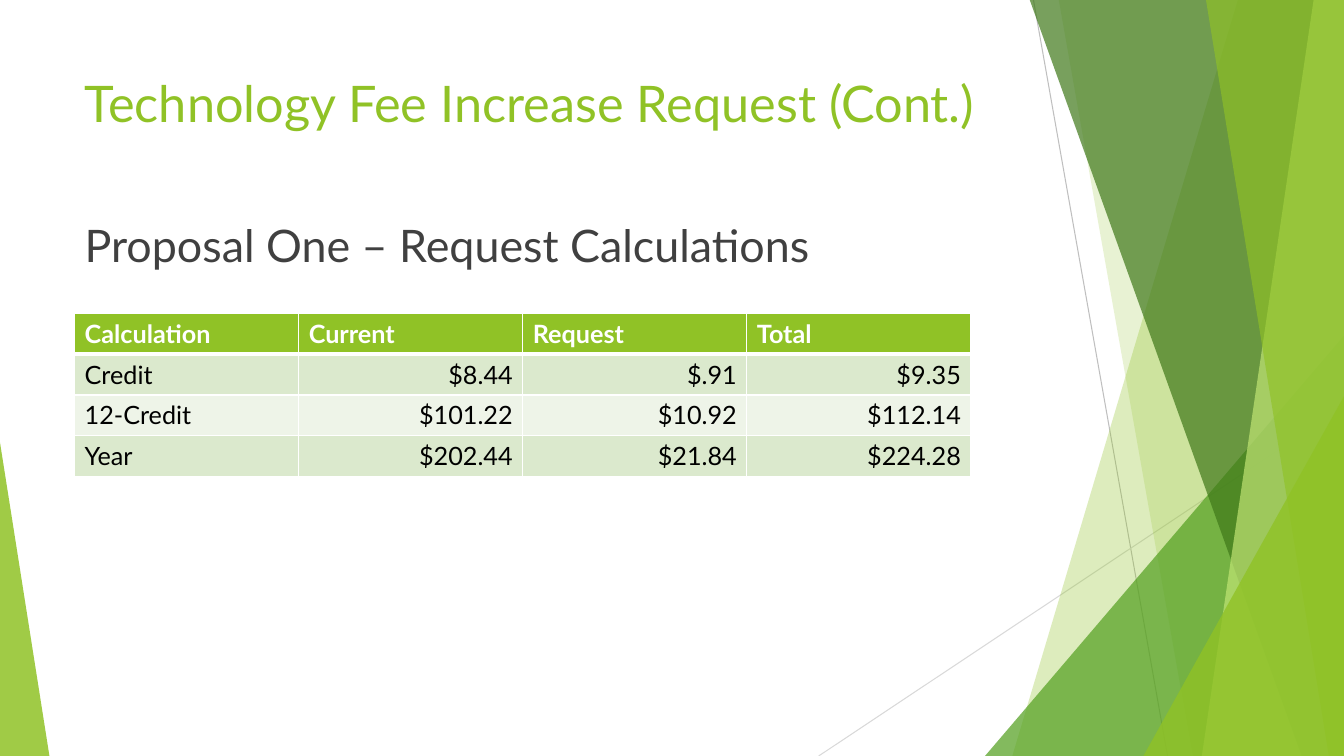
"""Build the technology fee request slide with its faceted green backdrop."""
from dataclasses import dataclass

from lxml.etree import SubElement
from pptx import Presentation
from pptx.dml.color import RGBColor as RGB
from pptx.enum.shapes import MSO_CONNECTOR as Link, MSO_SHAPE as Kind
from pptx.enum.text import MSO_ANCHOR as Anchor, PP_ALIGN as Align
from pptx.oxml import parse_xml
from pptx.oxml.ns import nsdecls, qn
from pptx.util import Inches, Pt

WIDE, HIGH = 13.33, 7.5
FONT = "Lato"
LIME = RGB(0x90, 0xC2, 0x26)
LEAF = RGB(0x54, 0xA0, 0x21)
MOSS = RGB(0x3F, 0x78, 0x19)
PALE = RGB(0xC0, 0xE4, 0x74)
GRAY = RGB(0xBF, 0xBF, 0xBF)
MIST = RGB(0xD9, 0xD9, 0xD9)
DARK = RGB(0x40, 0x40, 0x40)
WHITE = RGB(0xFF, 0xFF, 0xFF)
BLACK = RGB(0, 0, 0)
TINTS = (RGB(0xEE, 0xF4, 0xE8), RGB(0xDB, 0xE9, 0xCD))
ROWS = (
    ("Calculation", "Current", "Request", "Total"),
    ("Credit", "$8.44", "$.91", "$9.35"),
    ("12-Credit", "$101.22", "$10.92", "$112.14"),
    ("Year", "$202.44", "$21.84", "$224.28"),
)


@dataclass
class Ray:
    start: tuple[float, float]
    end: tuple[float, float]
    color: RGB


@dataclass
class Band:
    top: float
    foot: float
    color: RGB
    alpha: int


@dataclass
class Wedge:
    left: float
    top: float
    width: float
    peak: float
    color: RGB
    alpha: int


RAYS = (
    Ray((10.25, 0), (11.58, HIGH), GRAY),
    Ray((WIDE, 4.03), (8.12, HIGH), MIST),
)
FACETS = (
    Band(12.28, 10.04, LIME, 30),
    Band(10.5, 11.83, LIME, 20),
    Wedge(9.77, 3.33, 3.56, 1, LEAF, 72),
    Band(10.21, 12.91, MOSS, 70),
    Band(13.03, 11.92, PALE, 70),
    Band(11.96, 13.18, LIME, 65),
    Wedge(11.34, 3.93, 1.99, 1, LIME, 80),
    Wedge(0, 4.39, 0.49, 0, LIME, 85),
)


def draw_ray(shapes, ray: Ray) -> None:
    ends = [Inches(v) for v in ray.start + ray.end]
    line = shapes.add_connector(Link.STRAIGHT, *ends)
    line.line.color.rgb = ray.color
    line.line.width = Pt(0.75)
    SubElement(line._element.spPr, qn("a:effectLst"))


def draw_facet(shapes, facet: Band | Wedge) -> None:
    if isinstance(facet, Band):
        edge = ((WIDE, -0.01), (WIDE, HIGH), (facet.foot, HIGH))
        pen = shapes.build_freeform(Inches(facet.top), Inches(-0.01))
        pen.add_line_segments([(Inches(x), Inches(y)) for x, y in edge])
        shape = pen.convert_to_shape()
    else:
        box = (facet.left, facet.top, facet.width, HIGH - facet.top)
        shape = shapes.add_shape(Kind.ISOSCELES_TRIANGLE, *map(Inches, box))
        shape.adjustments[0] = facet.peak
    shape.shadow.inherit = False
    shape.line.fill.background()
    shape.fill.solid()
    shape.fill.fore_color.rgb = facet.color
    tint = shape._element.spPr.find(".//" + qn("a:srgbClr"))
    SubElement(tint, qn("a:alpha"), val=str(facet.alpha * 1000))


def style(frame, size: int, color: RGB, bold: bool = False,
          align: Align = Align.LEFT) -> None:
    para = frame.paragraphs[0]
    para.alignment = align
    for run in para.runs:
        font = run.font
        font.name, font.size, font.bold = FONT, Pt(size), bold
        font.color.rgb = color


def set_text(shape, text: str, top: float, height: float,
             size: int, color: RGB) -> None:
    shape.left, shape.top = Inches(0.74), Inches(top)
    shape.width, shape.height = Inches(9.4), Inches(height)
    frame = shape.text_frame
    frame.text = text
    frame.word_wrap = True
    frame.vertical_anchor = Anchor.TOP
    style(frame, size, color)


def add_edges(cell, row: int) -> None:
    props = cell._tc.get_or_add_tcPr()
    widths = {"L": 1, "R": 1, "T": 3 if row == 1 else 1,
              "B": 3 if row == 0 else 1}
    for spot, (side, width) in enumerate(widths.items()):
        props.insert(spot, parse_xml(
            f'<a:ln{side} {nsdecls("a")} w="{Pt(width)}"><a:solidFill>'
            f'<a:srgbClr val="{WHITE}"/></a:solidFill></a:ln{side}>'))


def draw_table(shapes) -> None:
    box = map(Inches, (0.74, 3.11, 8.89, 1.62))
    table = shapes.add_table(len(ROWS), len(ROWS[0]), *box).table
    for r, row in enumerate(ROWS):
        for c, text in enumerate(row):
            cell = table.cell(r, c)
            head = r == 0
            cell.text_frame.text = text
            style(cell.text_frame, 18, WHITE if head else BLACK, head,
                  Align.RIGHT if r and c else Align.LEFT)
            cell.fill.solid()
            cell.fill.fore_color.rgb = LIME if head else TINTS[r % 2]
            add_edges(cell, r)


def main() -> None:
    deck = Presentation()
    deck.slide_width, deck.slide_height = Inches(WIDE), Inches(HIGH)
    slide = deck.slides.add_slide(deck.slide_layouts[5])
    shapes = slide.shapes
    for ray in RAYS:
        draw_ray(shapes, ray)
    for facet in FACETS:
        draw_facet(shapes, facet)
    set_text(shapes.title, "Technology Fee Increase Request (Cont.)",
             0.67, 1.44, 36, LIME)
    note = shapes.add_textbox(0, 0, 0, 0)
    set_text(note, "Proposal One – Request Calculations",
             2.11, 0.87, 32, DARK)
    draw_table(shapes)
    deck.save("out.pptx")


if __name__ == "__main__":
    main()
